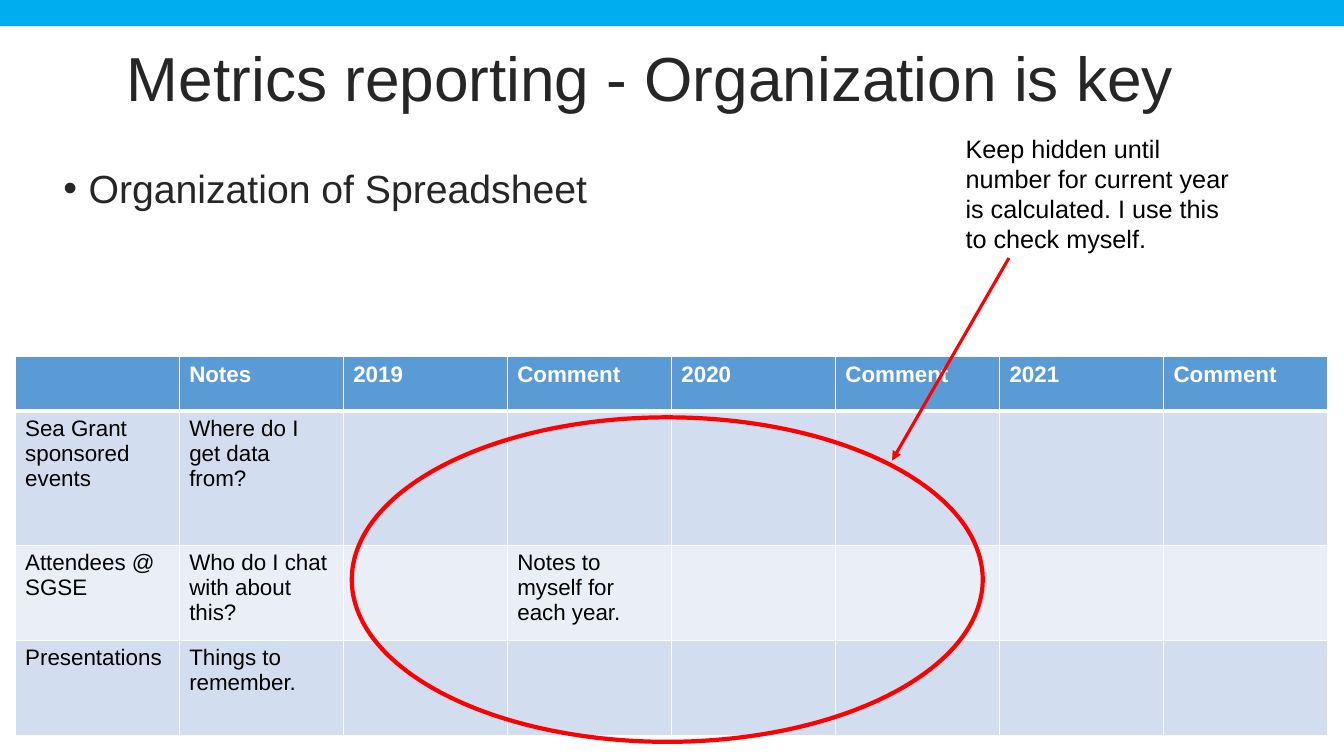
from dataclasses import dataclass

import pptx
import pptx.dml.color
import pptx.enum.shapes
import pptx.enum.text
import pptx.oxml
import pptx.oxml.ns
import pptx.util

Pt = pptx.util.Pt
Anchor = pptx.enum.text.MSO_ANCHOR


@dataclass(frozen=True)
class Theme:
    font: str = "Arial"
    white: str = "FFFFFF"
    black: str = "000000"
    ink: str = "262626"
    bar: str = "00AEEF"
    header: str = "5B9BD5"
    bands: tuple = ("D2DEEF", "EAEFF7")
    accent: str = "FF0000"
    title_size: float = 44.4
    bullet_size: float = 28
    note_size: float = 18
    cell_size: float = 16


THEME = Theme()
HEADINGS = ["", "Notes", "2019", "Comment", "2020", "Comment", "2021", "Comment"]
METRICS = [
    ["Sea Grant sponsored events", "Where do I get data from?"],
    ["Attendees @ SGSE", "Who do I chat with about this?", "", "Notes to myself for each year."],
    ["Presentations", "Things to remember."],
]
ROW_HEIGHTS = [38.8, 96.2, 67.8, 67.8]
COLUMN_WIDTH = 117.2


def rgb(value):
    return pptx.dml.color.RGBColor.from_string(value)


def add_xml(parent, tag, content="", attributes=""):
    element = pptx.oxml.parse_xml(
        f'<a:{tag} {pptx.oxml.ns.nsdecls("a")} {attributes}>{content}</a:{tag}>'
    )
    parent.append(element)


def write_text(frame, text, size, color=THEME.black, bold=False, spacing=None,
               bullet=False, anchor=Anchor.TOP):
    frame.word_wrap = True
    frame.vertical_anchor = anchor
    paragraph = frame.paragraphs[0]
    paragraph.text = text
    paragraph.alignment = pptx.enum.text.PP_ALIGN.LEFT
    if spacing:
        paragraph.line_spacing = spacing
    if bullet:
        properties = paragraph._p.get_or_add_pPr()
        properties.set("marL", str(Pt(18)))
        properties.set("indent", str(Pt(-18)))
        add_xml(properties, "buFont", attributes=f'typeface="{THEME.font}"')
        add_xml(properties, "buChar", attributes='char="•"')
    font = paragraph.font
    font.name = THEME.font
    font.size = Pt(size)
    font.bold = bold
    font.color.rgb = rgb(color)


def place(shape, left, top, width, height):
    shape.left, shape.top = Pt(left), Pt(top)
    shape.width, shape.height = Pt(width), Pt(height)


def add_title(slide, text):
    title = slide.shapes.title
    place(title, 83.5, 34.6, 828, 94.3)
    title.text_frame.auto_size = pptx.enum.text.MSO_AUTO_SIZE.NONE
    write_text(title.text_frame, text, THEME.title_size, color=THEME.ink, spacing=0.8)


def add_text(slide, box, text, size, **format_options):
    text_box = slide.shapes.add_textbox(*map(Pt, box))
    write_text(text_box.text_frame, text, size, **format_options)


def add_outline(slide, preset, box, line, weight, fill=None):
    shape = slide.shapes.add_shape(preset, *map(Pt, box))
    shape.shadow.inherit = False
    if fill:
        shape.fill.solid()
        shape.fill.fore_color.rgb = rgb(fill)
    else:
        shape.fill.background()
    shape.line.color.rgb = rgb(line)
    shape.line.width = Pt(weight)


def add_arrow(slide, start, end):
    arrow = slide.shapes.add_connector(
        pptx.enum.shapes.MSO_CONNECTOR.STRAIGHT, *map(Pt, start + end)
    )
    arrow.line.color.rgb = rgb(THEME.accent)
    arrow.line.width = Pt(2.25)
    add_xml(arrow.line._get_or_add_ln(), "tailEnd", attributes='type="triangle"')
    add_xml(arrow._element.spPr, "effectLst")


def format_cell(cell, text, fill, is_header, bottom_weight, top_weight):
    write_text(cell.text_frame, text, THEME.cell_size, bold=is_header,
               color=THEME.white if is_header else THEME.black)
    properties = cell._tc.get_or_add_tcPr()
    color = f'<a:solidFill><a:srgbClr val="{THEME.white}"/></a:solidFill>'
    for side, weight in (("L", 1), ("R", 1), ("T", top_weight), ("B", bottom_weight)):
        add_xml(properties, f"ln{side}", color, f'w="{Pt(weight)}"')
    cell.fill.solid()
    cell.fill.fore_color.rgb = rgb(fill)


def add_metrics_table(slide):
    rows = [HEADINGS] + METRICS
    columns = len(HEADINGS)
    table = slide.shapes.add_table(
        len(rows), columns, Pt(10.8), Pt(254.9),
        Pt(columns * COLUMN_WIDTH), Pt(sum(ROW_HEIGHTS))
    ).table
    for column in table.columns:
        column.width = Pt(COLUMN_WIDTH)
    for index, (texts, height) in enumerate(zip(rows, ROW_HEIGHTS)):
        table.rows[index].height = Pt(height)
        is_header = index == 0
        fill = THEME.header if is_header else THEME.bands[(index - 1) % 2]
        padded = texts + [""] * (columns - len(texts))
        for cell, text in zip(table.rows[index].cells, padded):
            format_cell(cell, text, fill, is_header,
                        bottom_weight=3 if is_header else 1,
                        top_weight=3 if index == 1 else 1)


def main():
    presentation = pptx.Presentation()
    presentation.slide_width, presentation.slide_height = Pt(960), Pt(540)
    slide = presentation.slides.add_slide(presentation.slide_layouts[5])
    presets = pptx.enum.shapes.MSO_SHAPE

    add_outline(slide, presets.RECTANGLE, (-7.2, -2.9, 973.4, 22.3),
                THEME.white, 1, fill=THEME.bar)
    add_title(slide, "Metrics reporting - Organization is key")
    add_text(slide, (38.2, 117.4, 828, 40), "Organization of Spreadsheet",
             THEME.bullet_size, color=THEME.ink, spacing=0.9, bullet=True)
    add_metrics_table(slide)
    add_outline(slide, presets.OVAL, (251.3, 298.1, 450.7, 231.8), THEME.accent, 3)
    add_arrow(slide, (720.7, 184.3), (637.2, 329))
    add_text(slide, (682.6, 91.4, 211.7, 94.3),
             "Keep hidden until number for current year is calculated. "
             "I use this to check myself.", THEME.note_size)
    presentation.save("out.pptx")


if __name__ == "__main__":
    main()
